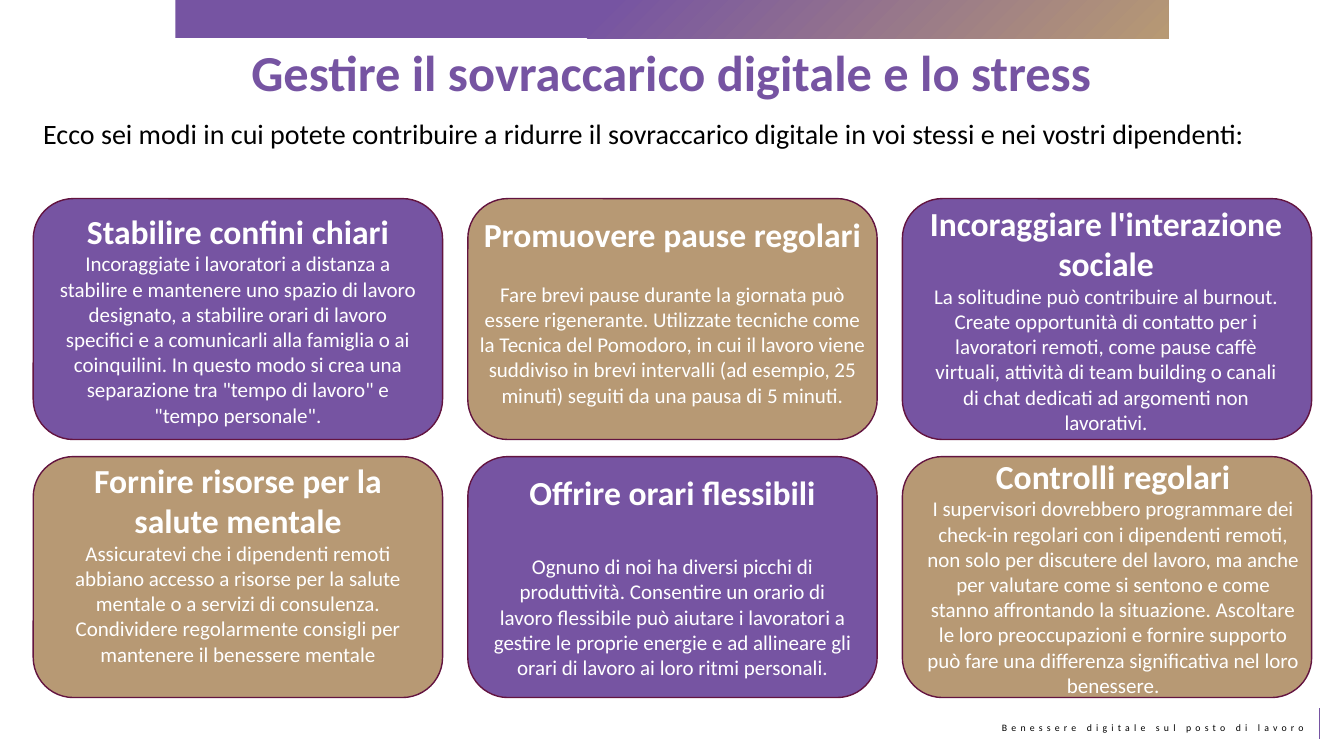
from dataclasses import dataclass

from lxml.etree import SubElement
from pptx import Presentation
from pptx.dml.color import RGBColor
from pptx.enum.shapes import MSO_CONNECTOR, MSO_SHAPE
from pptx.enum.text import MSO_ANCHOR, MSO_AUTO_SIZE, PP_ALIGN
from pptx.oxml.ns import qn
from pptx.util import Inches, Pt

COLORS = {
    "purple": "7654A2",
    "tan": "B79974",
    "border": "631440",
    "white": "FFFFFF",
    "black": "000000",
}
FONT = "Calibri"
CARD_LEFT, CARD_TOP = 0.33, 1.97
CARD_WIDTH, CARD_HEIGHT = 4.06, 2.39
COLUMN_STEP, ROW_STEP = 4.31, 2.56
COLUMNS = 3


@dataclass
class Box:
    left: float
    top: float
    width: float
    height: float

    def lengths(self) -> tuple:
        return tuple(Inches(v) for v in (self.left, self.top, self.width, self.height))


@dataclass
class Line:
    text: str
    size: float
    color: str
    bold: bool = False
    gap_before: float = 0


@dataclass
class Card:
    heading: str
    advice: str
    text_box: Box
    gap: float = 0  # points between heading and advice


CARDS = [
    Card("Stabilire confini chiari",
         "Incoraggiate i lavoratori a distanza a stabilire e mantenere uno spazio di lavoro "
         "designato, a stabilire orari di lavoro specifici e a comunicarli alla famiglia o ai "
         "coinquilini. In questo modo si crea una separazione tra \"tempo di lavoro\" e "
         "\"tempo personale\".",
         Box(0.47, 2.03, 3.78, 2.27)),
    Card("Promuovere pause regolari",
         "Fare brevi pause durante la giornata può essere rigenerante. Utilizzate tecniche come "
         "la Tecnica del Pomodoro, in cui il lavoro viene suddiviso in brevi intervalli "
         "(ad esempio, 25 minuti) seguiti da una pausa di 5 minuti.",
         Box(4.64, 2.06, 4.06, 2.04), gap=19.5),
    Card("Incoraggiare l'interazione sociale",
         "La solitudine può contribuire al burnout. Create opportunità di contatto per i "
         "lavoratori remoti, come pause caffè virtuali, attività di team building o canali di "
         "chat dedicati ad argomenti non lavorativi.",
         Box(9.08, 1.95, 3.78, 2.42)),
    Card("Fornire risorse per la salute mentale",
         "Assicuratevi che i dipendenti remoti abbiano accesso a risorse per la salute mentale o "
         "a servizi di consulenza. Condividere regolarmente consigli per mantenere il benessere "
         "mentale",
         Box(0.47, 4.5, 3.78, 2.17)),
    Card("Offrire orari flessibili",
         "Ognuno di noi ha diversi picchi di produttività. Consentire un orario di lavoro "
         "flessibile può aiutare i lavoratori a gestire le proprie energie e ad allineare gli "
         "orari di lavoro ai loro ritmi personali.",
         Box(4.78, 4.63, 3.78, 2.17), gap=29.3),
    Card("Controlli regolari",
         "I supervisori dovrebbero programmare dei check-in regolari con i dipendenti remoti, non "
         "solo per discutere del lavoro, ma anche per valutare come si sentono e come stanno "
         "affrontando la situazione. Ascoltare le loro preoccupazioni e fornire supporto può fare "
         "una differenza significativa nel loro benessere.",
         Box(9.08, 4.45, 3.92, 2.54)),
]


def rgb(name: str) -> RGBColor:
    return RGBColor.from_string(COLORS[name])


def add_text(shapes, box: Box, lines: list[Line], align=PP_ALIGN.CENTER,
             anchor=MSO_ANCHOR.TOP, grow: bool = True):
    frame = shapes.add_textbox(*box.lengths()).text_frame
    frame.word_wrap = True
    frame.vertical_anchor = anchor
    frame.auto_size = MSO_AUTO_SIZE.SHAPE_TO_FIT_TEXT if grow else MSO_AUTO_SIZE.NONE
    frame.text = "\n".join(line.text for line in lines)
    for paragraph, line in zip(frame.paragraphs, lines):
        paragraph.alignment = align
        if line.gap_before:
            paragraph.space_before = Pt(line.gap_before)
        font = paragraph.runs[0].font
        font.name = FONT
        font.size = Pt(line.size)
        font.bold = line.bold
        font.color.rgb = rgb(line.color)
    return frame


def add_card(shapes, index: int, card: Card) -> None:
    row, column = divmod(index, COLUMNS)
    panel_box = Box(CARD_LEFT + column * COLUMN_STEP, CARD_TOP + row * ROW_STEP,
                    CARD_WIDTH, CARD_HEIGHT)
    group = shapes.add_group_shape()
    panel = group.shapes.add_shape(MSO_SHAPE.ROUNDED_RECTANGLE, *panel_box.lengths())
    panel.shadow.inherit = False
    panel.fill.solid()
    panel.fill.fore_color.rgb = rgb("tan" if index % 2 else "purple")
    panel.line.color.rgb = rgb("border")
    panel.line.width = Pt(1)
    add_text(group.shapes, card.text_box,
             [Line(card.heading, 24, "white", bold=True),
              Line(card.advice, 15, "white", gap_before=card.gap)],
             anchor=MSO_ANCHOR.MIDDLE)


def add_top_band(shapes) -> None:
    band = shapes.add_shape(MSO_SHAPE.RECTANGLE, *Box(1.74, 0, 9.85, 0.38).lengths())
    band.shadow.inherit = False
    band.line.fill.background()
    band.fill.gradient()
    for stop, color, position in zip(band.fill.gradient_stops, ("tan", "purple"), (0, 0.58)):
        stop.color.rgb = rgb(color)
        stop.position = position
    # Radial gradient spreading from the bottom right corner
    gradient = band.element.spPr.find(qn("a:gradFill"))
    gradient.remove(gradient.find(qn("a:lin")))
    radial = SubElement(gradient, qn("a:path"), {"path": "circle"})
    SubElement(radial, qn("a:fillToRect"), {"l": "100000", "t": "100000"})


def add_footer(shapes) -> None:
    footer = add_text(shapes, Box(9.68, 7.11, 3.35, 0.22),
                      [Line("Benessere digitale sul posto di lavoro", 7, "black")],
                      align=PP_ALIGN.RIGHT)
    footer.paragraphs[0].runs[0].font._element.set("spc", "300")
    rule = shapes.add_connector(MSO_CONNECTOR.STRAIGHT, Inches(13.09), Inches(7.33),
                                Inches(13.09), Inches(7.02))
    rule.line.color.rgb = rgb("purple")
    rule.line.width = Pt(0.75)
    SubElement(rule.element.spPr, qn("a:effectLst"))


def main() -> None:
    presentation = Presentation()
    presentation.slide_width = Inches(13.33)
    presentation.slide_height = Inches(7.5)
    shapes = presentation.slides.add_slide(presentation.slide_layouts[6]).shapes

    # Frame of the slide
    add_footer(shapes)
    add_top_band(shapes)

    # Title
    add_text(shapes, Box(0.93, 0.36, 11.46, 0.88),
             [Line("Gestire il sovraccarico digitale e lo stress", 36, "purple", bold=True)],
             grow=False)

    # Six pieces of advice
    for index, card in enumerate(CARDS):
        add_card(shapes, index, card)

    # Introduction
    add_text(shapes, Box(0.33, 1.11, 12.67, 0.44),
             [Line("Ecco sei modi in cui potete contribuire a ridurre il sovraccarico digitale "
                   "in voi stessi e nei vostri dipendenti:", 20, "black")],
             align=PP_ALIGN.LEFT)

    presentation.save("out.pptx")


if __name__ == "__main__":
    main()
